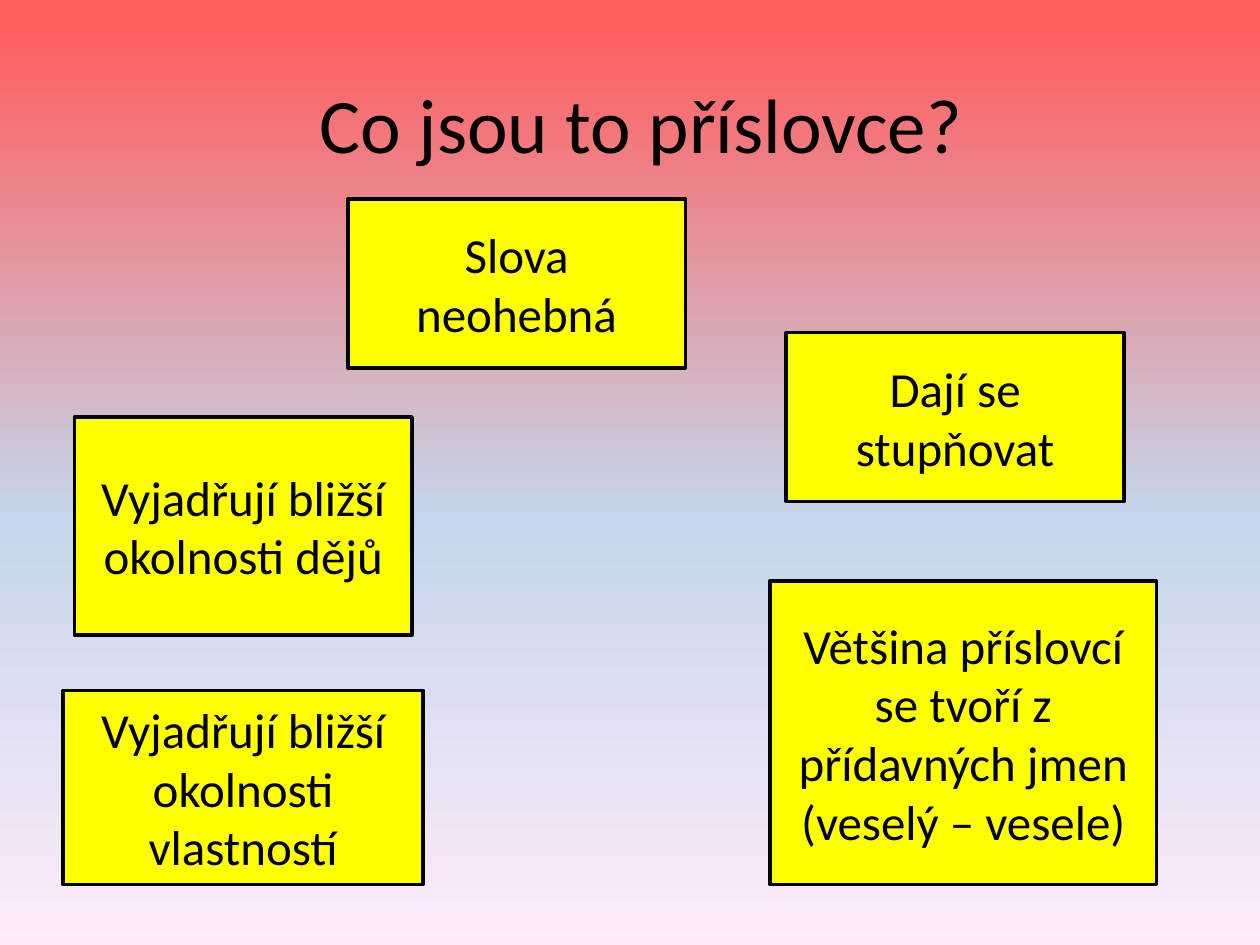
"""Build a slide that explains what adverbs are, in Czech."""
from copy import deepcopy
from dataclasses import dataclass

from pptx import Presentation
from pptx.dml.color import RGBColor as RGB
from pptx.enum.shapes import MSO_SHAPE as SHAPE
from pptx.enum.text import MSO_ANCHOR as ANCHOR, PP_ALIGN as ALIGN
from pptx.oxml.ns import qn
from pptx.util import Inches, Pt


@dataclass(frozen=True)
class Theme:
    font: str = "Calibri"
    ink: str = "000000"
    card: str = "FFFF00"
    title_size: int = 44
    card_size: int = 28
    line_width: int = 2
    gradient: tuple = ((0.03, "FF5E5E"), (0.55, "C4D6EB"), (1, "FFEBFA"))


class SlideBuilder:
    def __init__(self, s, theme):
        self.s = s
        self.theme = theme

    def background(self):
        fill = self.s.background.fill
        fill.gradient()
        fill.gradient_angle = 270
        stops = next(self.s.element.iter(qn("a:gsLst")))
        stops.insert(1, deepcopy(stops[0]))
        for stop, (position, color) in zip(fill.gradient_stops, self.theme.gradient):
            stop.position = position
            stop.color.rgb = RGB.from_string(color)

    def label(self, sp, text, size):
        tf = sp.text_frame
        tf.text = text
        tf.word_wrap = True
        tf.vertical_anchor = ANCHOR.MIDDLE
        p = tf.paragraphs[0]
        p.alignment = ALIGN.CENTER
        font = p.runs[0].font
        font.name = self.theme.font
        font.size = Pt(size)
        font.color.rgb = RGB.from_string(self.theme.ink)

    def title(self, text, *box):
        sp = self.s.shapes.add_textbox(*map(Inches, box))
        self.label(sp, text, self.theme.title_size)

    def card(self, text, *box):
        sp = self.s.shapes.add_shape(SHAPE.RECTANGLE, *map(Inches, box))
        sp.shadow.inherit = False
        sp.fill.solid()
        sp.fill.fore_color.rgb = RGB.from_string(self.theme.card)
        sp.line.color.rgb = RGB.from_string(self.theme.ink)
        sp.line.width = Pt(self.theme.line_width)
        self.label(sp, text, self.theme.card_size)


CARDS = (
    ("Slova neohebná", 2.76, 1.58, 2.68, 1.34),
    ("Vyjadřují bližší okolnosti vlastností", 0.5, 5.48, 2.86, 1.54),
    ("Vyjadřují bližší okolnosti dějů", 0.59, 3.31, 2.68, 1.73),
    ("Dají se stupňovat", 6.24, 2.64, 2.68, 1.34),
    ("Většina příslovcí se tvoří z přídavných jmen (veselý – vesele)",
     6.11, 4.61, 3.07, 2.41),
)


def main():
    prs = Presentation()
    prs.slide_width, prs.slide_height = Inches(10), Inches(7.5)
    builder = SlideBuilder(prs.slides.add_slide(prs.slide_layouts[6]), Theme())
    builder.background()
    builder.title("Co jsou to příslovce?", 0.59, 0.35, 9, 1.25)
    for card in CARDS:
        builder.card(*card)
    prs.save("out.pptx")


if __name__ == "__main__":
    main()
